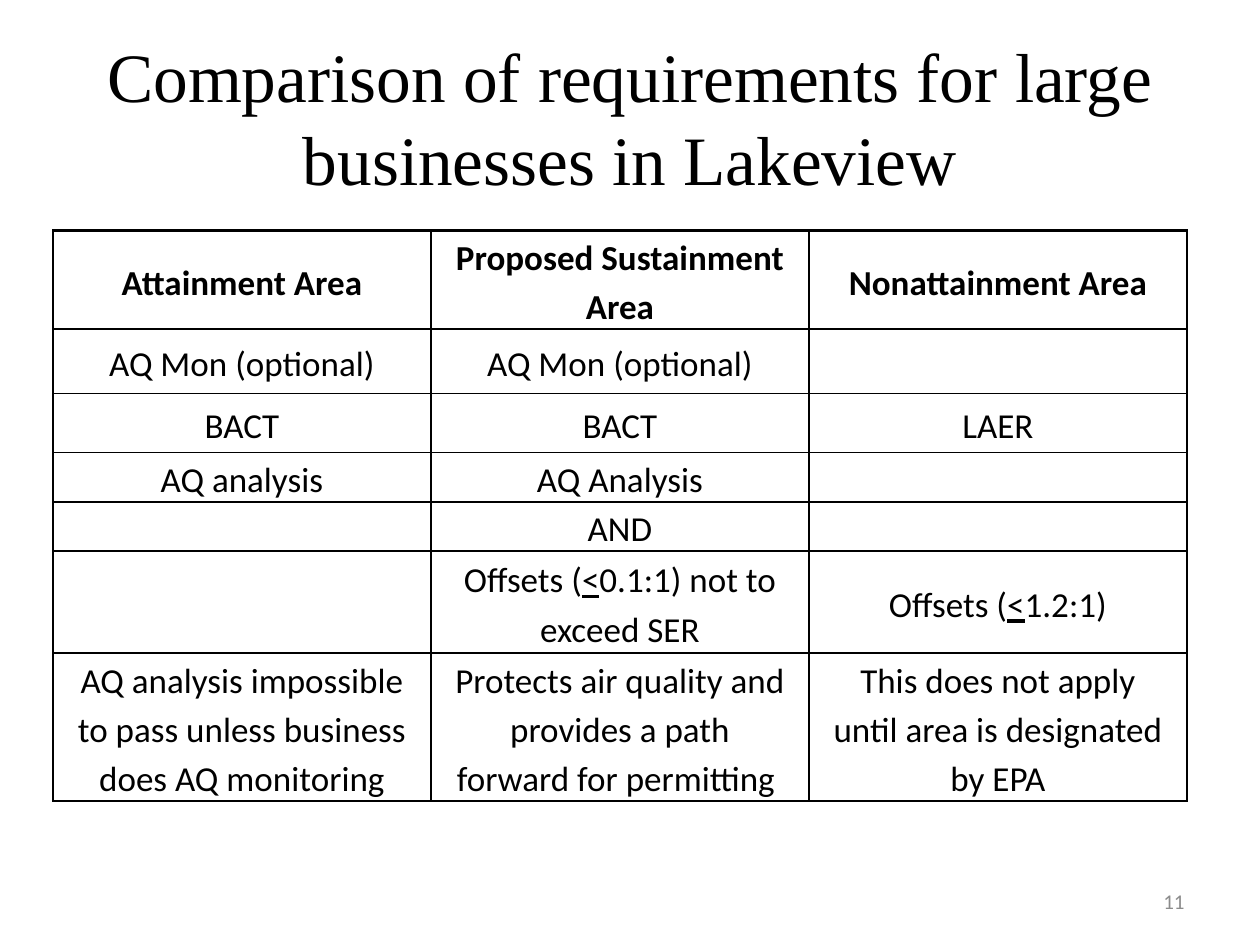
"""Build a slide comparing air quality requirements for large businesses."""
from lxml import etree
from pptx import Presentation
from pptx.dml.color import RGBColor
from pptx.enum.text import MSO_ANCHOR, MSO_AUTO_SIZE, PP_ALIGN
from pptx.oxml.ns import qn
from pptx.util import Inches, Pt

MIDDLE = MSO_ANCHOR.MIDDLE
CENTER, RIGHT = PP_ALIGN.CENTER, PP_ALIGN.RIGHT
FIXED = MSO_AUTO_SIZE.NONE
TITLE_ONLY = 5

COLORS = {"ink": "000000", "muted": "8C8C8C", "paper": "FFFFFF"}
TITLE = "Comparison of requirements for large businesses in Lakeview"
PAGE_NUMBER = "11"
ROWS = [
    (0.68, ["Attainment Area", "Proposed Sustainment Area", "Nonattainment Area"]),
    (0.51, ["AQ Mon (optional)", "AQ Mon (optional)", ""]),
    (0.47, ["BACT", "BACT", "LAER"]),
    (0.34, ["AQ analysis", "AQ Analysis", ""]),
    (0.34, ["", "AND", ""]),
    (0.81, ["", "Offsets (<0.1:1) not to exceed SER", "Offsets (<1.2:1)"]),
    (0.81, ["AQ analysis impossible to pass unless business does AQ monitoring",
            "Protects air quality and provides a path forward for permitting ",
            "This does not apply until area is designated by EPA"]),
]
COLUMN_WIDTH = 3
TABLE_LEFT, TABLE_TOP = 0.42, 1.83
CELL_FORMAT = {"margin_left": Inches(0.07), "margin_right": Inches(0.07),
               "margin_top": 0, "margin_bottom": 0, "vertical_anchor": MIDDLE}
TITLE_FONT = {"name": "Times New Roman", "size": Pt(39.6)}
TABLE_FONT = {"name": "Calibri", "size": Pt(20)}
NUMBER_FONT = {"name": "Calibri", "size": Pt(12)}


def apply(target, values):
    for name, value in values.items():
        setattr(target, name, value)


def style_font(font, values, color="ink"):
    apply(font, values)
    font.color.rgb = RGBColor.from_string(COLORS[color])


def place(shape, left, top, width, height):
    apply(shape, {"left": Inches(left), "top": Inches(top),
                  "width": Inches(width), "height": Inches(height)})


def write(shape, text, align, font, color="ink"):
    frame = shape.text_frame
    apply(frame, {"word_wrap": True, "auto_size": FIXED, "vertical_anchor": MIDDLE})
    para = frame.paragraphs[0]
    para.alignment = align
    span = para.add_run()
    span.text = text
    style_font(span.font, font, color)


def add_borders(cell, row):
    top = 1.5 if row <= 1 else 1
    bottom = 1.5 if row == 0 else 1
    properties = cell._tc.get_or_add_tcPr()
    for position, (side, width) in enumerate(
            [("lnL", 1), ("lnR", 1), ("lnT", top), ("lnB", bottom)]):
        line = etree.Element(qn(f"a:{side}"), w=str(Pt(width)))
        fill = etree.SubElement(line, qn("a:solidFill"))
        etree.SubElement(fill, qn("a:srgbClr"), val=COLORS["ink"])
        properties.insert(position, line)


def fill_cell(cell, text, row):
    apply(cell, CELL_FORMAT)
    cell.fill.solid()
    cell.fill.fore_color.rgb = RGBColor.from_string(COLORS["paper"])
    add_borders(cell, row)
    if not text:
        return
    header = row == 0
    gap = Pt(3.6 if header else 3)
    para = cell.text_frame.paragraphs[0]
    apply(para, {"alignment": CENTER, "line_spacing": 1.15,
                 "space_before": gap, "space_after": gap})
    if not header:
        for margin in ("marL", "marR"):
            para._p.get_or_add_pPr().set(margin, str(Inches(0.1)))
    before, sign, after = text.partition("<")
    for part in filter(None, (before, sign, after)):
        span = para.add_run()
        span.text = part
        style_font(span.font, {**TABLE_FONT, "bold": header, "underline": part == "<"})


def add_requirements(page):
    columns = len(ROWS[0][1])
    height = sum(row_height for row_height, _ in ROWS)
    table = page.shapes.add_table(
        len(ROWS), columns, Inches(TABLE_LEFT), Inches(TABLE_TOP),
        Inches(COLUMN_WIDTH * columns), Inches(height)).table
    for row, (row_height, texts) in enumerate(ROWS):
        table.rows[row].height = Inches(row_height)
        for column, text in enumerate(texts):
            fill_cell(table.cell(row, column), text, row)


def main():
    deck = Presentation()
    apply(deck, {"slide_width": Inches(10), "slide_height": Inches(7.5)})
    page = deck.slides.add_slide(deck.slide_layouts[TITLE_ONLY])
    title = page.shapes.title
    place(title, 0.5, 0.3, 9, 1.25)
    write(title, TITLE, CENTER, TITLE_FONT)
    add_requirements(page)
    number = page.shapes.add_textbox(0, 0, 0, 0)
    place(number, 7.17, 6.95, 2.33, 0.4)
    write(number, PAGE_NUMBER, RIGHT, NUMBER_FONT, "muted")
    deck.save("out.pptx")


if __name__ == "__main__":
    main()
